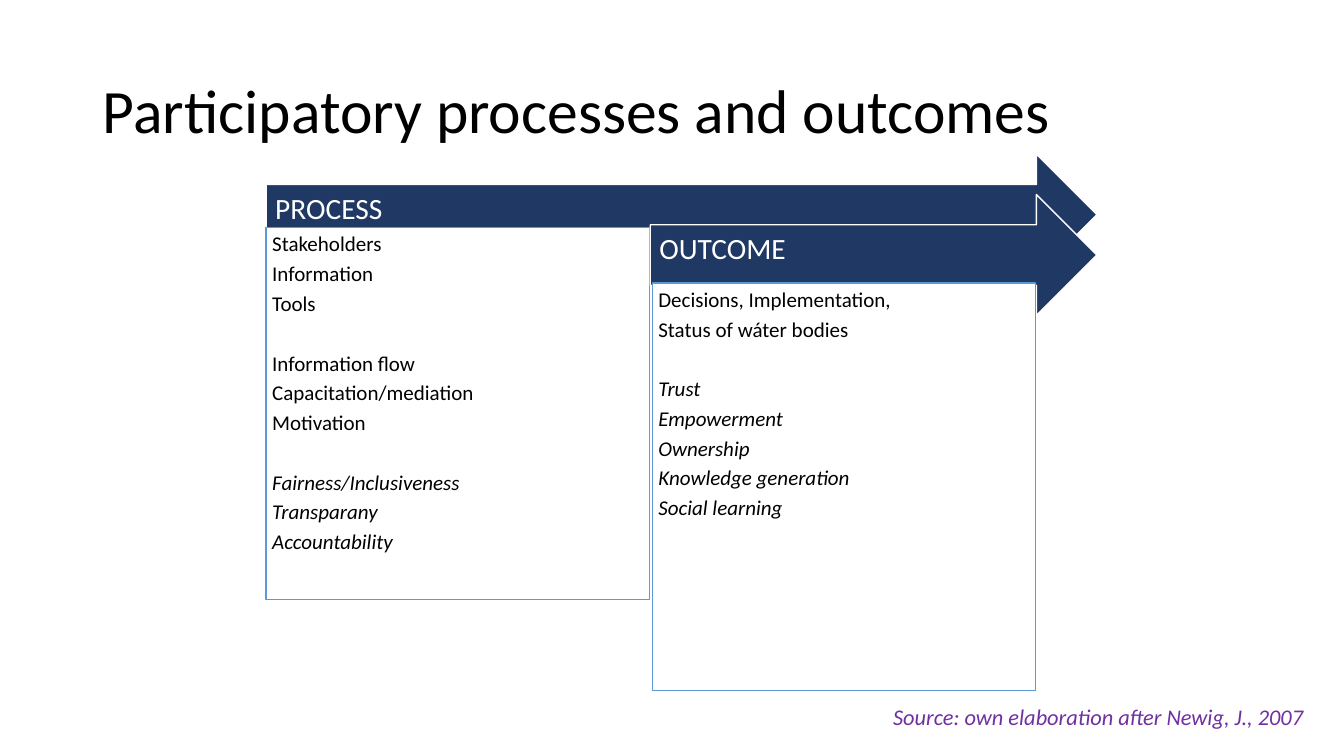
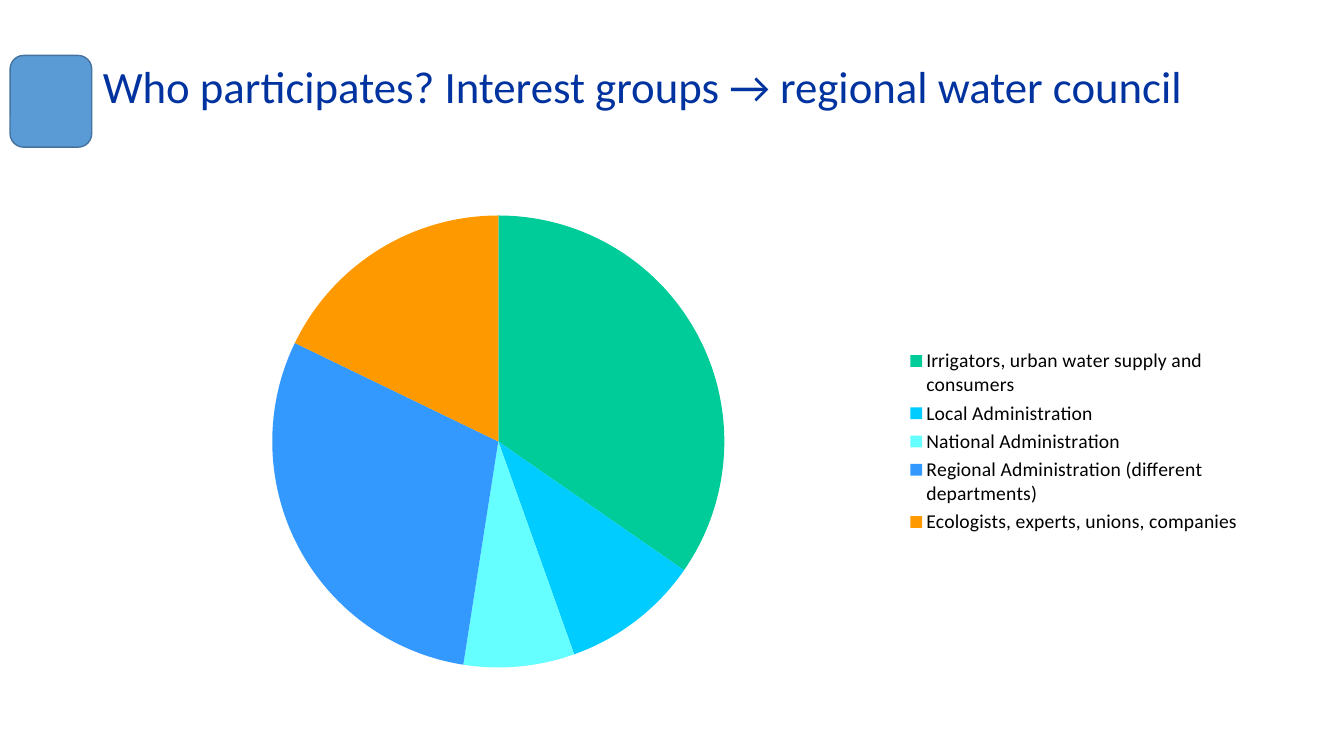
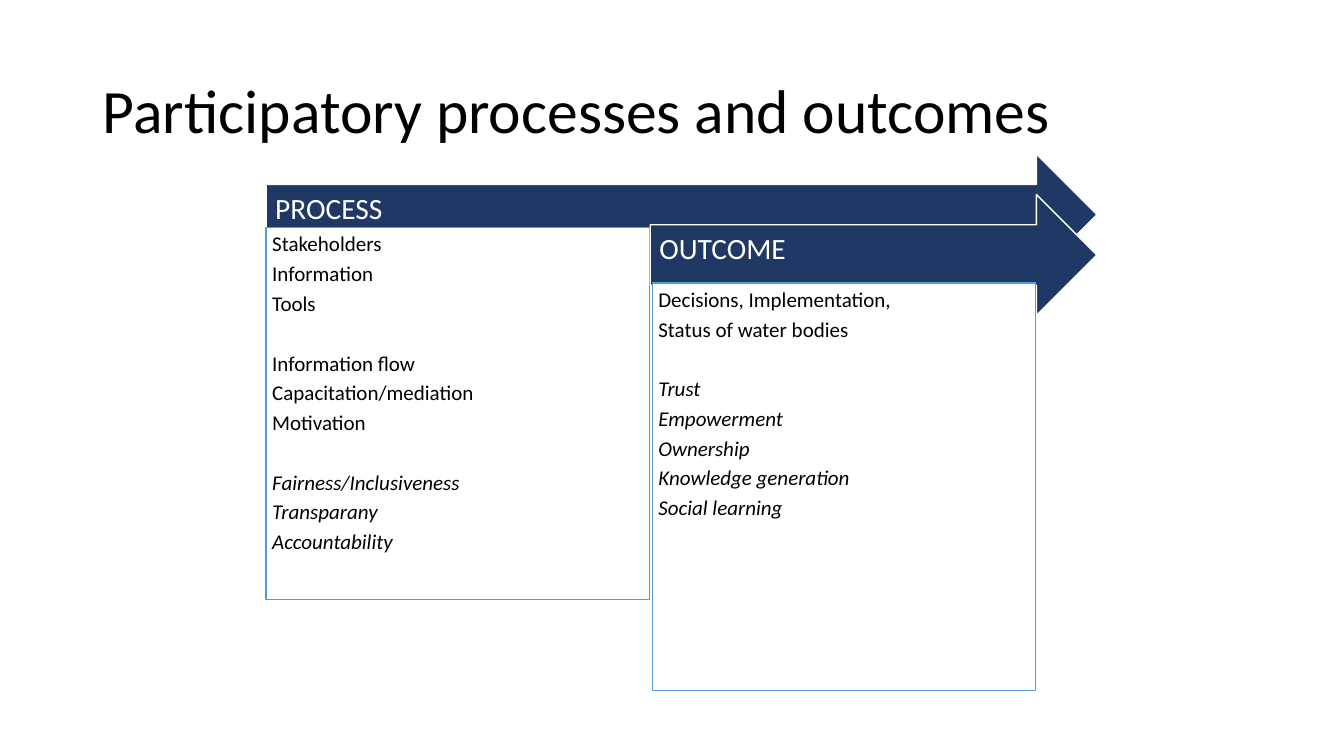
"""Build three slides on participatory water management."""
from pptx import Presentation
from pptx.chart.data import CategoryChartData
from pptx.dml.color import RGBColor
from pptx.enum import chart as charts, shapes, text
from pptx.util import Inches, Pt

COLORS = {
    "black": "000000", "white": "FFFFFF", "navy": "203864", "blue": "5B9BD5",
    "edge": "43739E", "title_blue": "00339F", "purple": "7030A0",
}
SLICES = [
    ("Irrigators, urban water supply and consumers", 35, "00CC99"),
    ("Local Administration", 10, "00CCFF"),
    ("National Administration", 8, "66FFFF"),
    ("Regional Administration (different departments)", 30, "3399FF"),
    ("Ecologists, experts, unions, companies", 18, "FF9900"),
]
PROCESS_GROUPS = [
    (["Stakeholders", "Information", "Tools"], False),
    (["Information flow", "Capacitation/mediation", "Motivation"], False),
    (["Fairness/Inclusiveness", "Transparany", "Accountability"], True),
]
OUTCOME_QUALITIES = ["Trust", "Empowerment", "Ownership",
                     "Knowledge generation", "Social learning"]


def write(para, content, size=15, color="black", italic=False,
          line=None, before=0, after=0):
    """Fill a paragraph with one formatted span."""
    para.alignment = text.PP_ALIGN.LEFT
    para.line_spacing = line
    para.space_before, para.space_after = Pt(before), Pt(after)
    span = para.add_run()
    span.text = content
    span.font.name = "Calibri"
    span.font.size = Pt(size)
    span.font.italic = italic
    span.font.color.rgb = RGBColor.from_string(COLORS[color])


class Deck:
    """Hold the shared style and the current page."""

    def __init__(self):
        """Start a widescreen deck."""
        self.deck = Presentation()
        self.deck.slide_width = Inches(13.33)
        self.deck.slide_height = Inches(7.5)
        self.page = None

    def add_page(self, title, size=44, color="black", width=11.5, bottom=0.05):
        """Add a page with a formatted title."""
        self.page = self.deck.slides.add_slide(self.deck.slide_layouts[5])
        box = self.page.shapes.title
        box.left, box.top = Inches(0.92), Inches(0.4)
        box.width, box.height = Inches(width), Inches(1.45)
        frame = self.set_frame(box, (0.1, 0.05, 0.1, bottom), "MIDDLE")
        write(frame.paragraphs[0], title, size=size, color=color, line=0.9)

    def set_frame(self, box, insets, anchor="TOP"):
        """Set wrapping, insets and anchor of a text frame."""
        frame = box.text_frame
        frame.auto_size = text.MSO_AUTO_SIZE.NONE
        frame.word_wrap = True
        frame.vertical_anchor = text.MSO_ANCHOR[anchor]
        (frame.margin_left, frame.margin_top,
         frame.margin_right, frame.margin_bottom) = map(Inches, insets)
        return frame

    def add_shape(self, kind, place, fill, line):
        """Add a flat preset shape."""
        shape = self.page.shapes.add_shape(
            shapes.MSO_SHAPE[kind], *map(Inches, place))
        shape.shadow.inherit = False
        shape.fill.solid()
        shape.fill.fore_color.rgb = RGBColor.from_string(COLORS[fill])
        shape.line.color.rgb = RGBColor.from_string(COLORS[line])
        shape.line.width = Pt(1)
        return shape

    def add_arrow(self, label, left, top, width):
        """Add a labelled arrow."""
        arrow = self.add_shape("RIGHT_ARROW", (left, top, width, 1.2), "navy", "white")
        frame = self.set_frame(arrow, (0.09, 0.09, 0.28, 0.19), "MIDDLE")
        write(frame.paragraphs[0], label, size=21, color="white", line=0.9)

    def add_panel(self, groups, left, top, height):
        """Add a panel that lists groups of lines with a gap between groups."""
        panel = self.add_shape("RECTANGLE", (left, top, 3.8, height), "white", "blue")
        frame = self.set_frame(panel, (0.06,) * 4)
        para = frame.paragraphs[0]
        for group, (lines, italic) in enumerate(groups):
            for row, content in enumerate(lines):
                if group or row:
                    para = frame.add_paragraph()
                gap = 21.5 if group and not row else 0
                write(para, content, italic=italic, line=0.9, before=gap, after=5)

    def add_source(self, content):
        """Add the source note at the lower right."""
        box = self.page.shapes.add_textbox(*map(Inches, (8.76, 6.93, 4.44, 0.37)))
        frame = self.set_frame(box, (0.1, 0.05, 0.1, 0.05))
        write(frame.paragraphs[0], content, size=16, color="purple", italic=True)

    def add_pie(self, slices, place):
        """Add a pie chart with a legend on the right."""
        data = CategoryChartData()
        data.categories = [name for name, _, _ in slices]
        data.add_series("Series 1", [value for _, value, _ in slices])
        chart = self.page.shapes.add_chart(
            charts.XL_CHART_TYPE.PIE, *map(Inches, place), data).chart
        chart.has_title = False
        chart.font.name, chart.font.size = "Calibri", Pt(10)
        chart.font.color.rgb = RGBColor.from_string(COLORS["black"])
        chart.has_legend = True
        chart.legend.position = charts.XL_LEGEND_POSITION.RIGHT
        chart.legend.include_in_layout = False
        chart.legend.font.name, chart.legend.font.size = "Calibri", Pt(14)
        plot = chart.plots[0]
        plot.vary_by_categories = True
        for index, (_, _, color) in enumerate(slices):
            style = plot.series[0].points[index].format
            style.fill.solid()
            style.fill.fore_color.rgb = RGBColor.from_string(color)
            style.line.fill.background()

    def add_process_page(self, status):
        """Add the page that sets processes against outcomes."""
        self.add_page("Participatory processes and outcomes")
        self.add_arrow("PROCESS", 2.64, 1.53, 8.24)
        self.add_panel(PROCESS_GROUPS, 2.64, 2.26, 3.69)
        self.add_arrow("OUTCOME", 6.45, 1.93, 4.43)
        outcomes = [(["Decisions, Implementation,", status], False),
                    (OUTCOME_QUALITIES, True)]
        self.add_panel(outcomes, 6.47, 2.81, 4.04)


def main():
    """Build and save the deck."""
    deck = Deck()
    deck.add_process_page("Status of wáter bodies")
    deck.add_source("Source: own elaboration after Newig, J., 2007")
    deck.add_page("Who participates? Interest groups → regional water council",
                  size=32, color="title_blue", width=11.86, bottom=0.54)
    deck.add_shape("ROUNDED_RECTANGLE", (0.1, 0.55, 0.81, 0.91), "blue", "edge")
    deck.add_pie(SLICES, (0.92, 2, 11.5, 4.76))
    deck.add_process_page("Status of water bodies")
    deck.deck.save("out.pptx")


if __name__ == "__main__":
    main()
